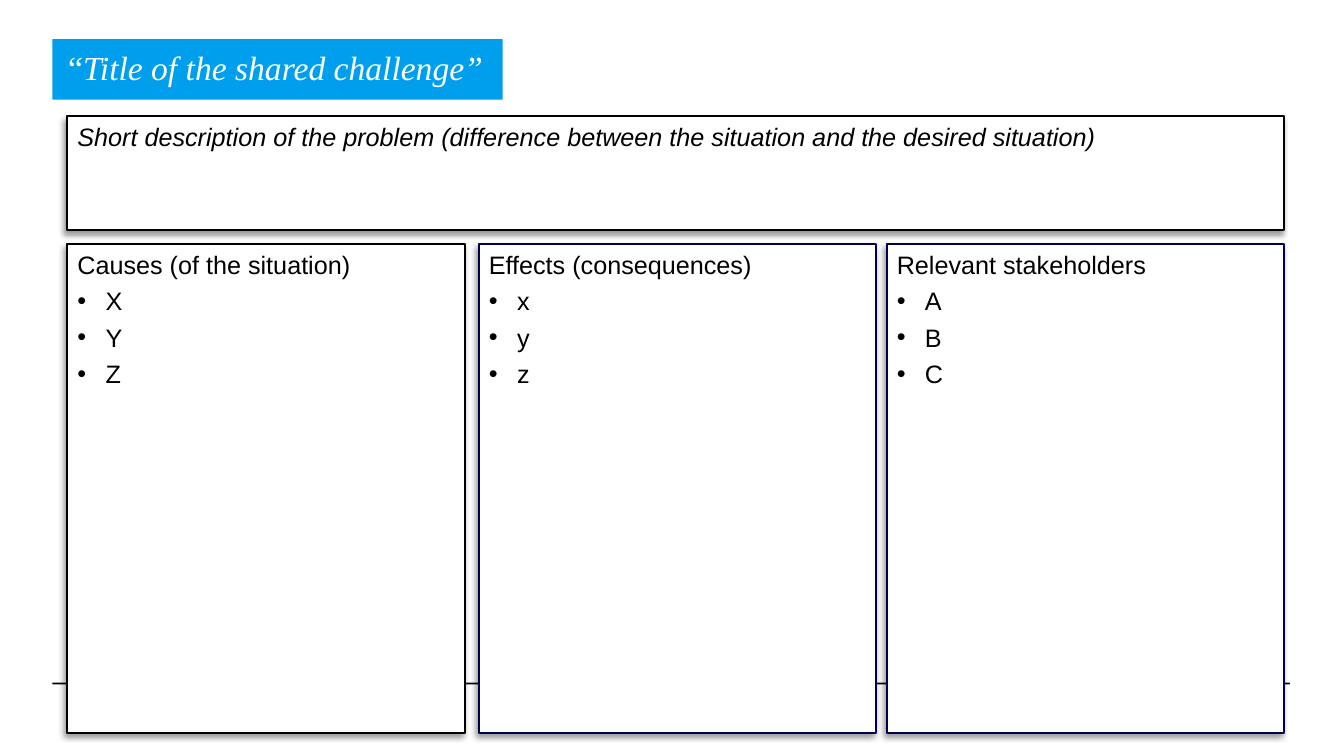
from dataclasses import dataclass

from lxml import etree
from pptx import Presentation
from pptx import util as u
from pptx.dml.color import RGBColor
from pptx.enum import shapes, text
from pptx.oxml import parse_xml
from pptx.oxml.ns import nsdecls, qn

TITLE = [("“", False), ("Title of the shared challenge”", True)]
DESCRIPTION = ("Short description of the problem "
               "(difference between the situation and the desired situation)")
# heading, items, left edge in cm, outline colour
COLUMNS = [
    ("Causes (of the situation)", ["X", "Y", "Z"], 1.7, "000000"),
    ("Effects (consequences)", ["x", "y", "z"], 12.07, "00004B"),
    ("Relevant stakeholders", ["A", "B", "C"], 22.35, "00004B"),
]


@dataclass(frozen=True)
class Theme:
    black: str = "000000"
    white: str = "FFFFFF"
    blue: str = "009FEE"
    body_font: str = "Arial"
    title_font: str = "Times New Roman"
    body_size: float = 18
    title_size: float = 24
    outline: float = 1.5
    item_gap: float = 4.5


T = Theme()
LEFT, COLUMN_W, COLUMN_TOP, COLUMN_H = 1.7, 10.01, 6.15, 12.32
CONTENT_W = COLUMNS[-1][2] + COLUMN_W - LEFT
INDENT = u.Cm(0.71)


def add_box(slide, left, top, width, height, fill, line=None):
    sp = slide.shapes.add_shape(shapes.MSO_SHAPE.RECTANGLE,
                                *map(u.Cm, (left, top, width, height)))
    sp.shadow.inherit = False
    sp.fill.solid()
    sp.fill.fore_color.rgb = RGBColor.from_string(fill)
    if line:
        sp.line.color.rgb = RGBColor.from_string(line)
        sp.line.width = u.Pt(T.outline)
    else:
        sp.line.fill.background()
    tf = sp.text_frame
    tf.word_wrap = True
    tf.vertical_anchor = text.MSO_ANCHOR.TOP
    return sp


def add_panel(slide, left, top, width, height, line):
    """White outlined box with a soft shadow to the lower left."""
    sp = add_box(slide, left, top, width, height, T.white, line)
    effects = sp._element.spPr.find(qn("a:effectLst"))
    effects.append(parse_xml(
        f'<a:outerShdw {nsdecls("a")} blurRad="{u.Pt(4)}" dist="{u.Pt(3)}" '
        f'dir="{135 * 60000}" algn="tr" rotWithShape="0">'
        f'<a:srgbClr val="{T.black}"><a:alpha val="40000"/></a:srgbClr>'
        '</a:outerShdw>'))
    return sp


def write(p, content, font=T.body_font, size=T.body_size, color=T.black,
          italic=False, bullet=False):
    p.alignment = text.PP_ALIGN.LEFT
    if bullet:
        pPr = p._p.get_or_add_pPr()
        pPr.set("marL", str(INDENT))
        pPr.set("indent", str(-INDENT))
        etree.SubElement(pPr, qn("a:buFont")).set("typeface", T.body_font)
        etree.SubElement(pPr, qn("a:buChar")).set("char", "•")
        p.space_before = u.Pt(T.item_gap)
    r = p.add_run()
    r.text = content
    r.font.name = font
    r.font.size = u.Pt(size)
    r.font.italic = italic
    r.font.color.rgb = RGBColor.from_string(color)


def add_title(slide):
    tf = add_box(slide, 1.32, 0.99, 11.35, 1.52, T.blue).text_frame
    tf.word_wrap = False
    tf.auto_size = text.MSO_AUTO_SIZE.SHAPE_TO_FIT_TEXT
    tf.margin_left = tf.margin_right = u.Cm(0.4)
    tf.margin_top, tf.margin_bottom = u.Cm(0.2), u.Cm(0.3)
    for part, italic in TITLE:
        write(tf.paragraphs[0], part, font=T.title_font, size=T.title_size,
              color=T.white, italic=italic)


def main():
    prs = Presentation()
    prs.slide_width, prs.slide_height = u.Cm(33.87), u.Cm(19.05)
    slide = prs.slides.add_slide(prs.slide_layouts[6])

    add_box(slide, 1.32, 17.2, 31.19, 0.05, T.black)
    for heading, items, left, line in COLUMNS:
        sp = add_panel(slide, left, COLUMN_TOP, COLUMN_W, COLUMN_H, line)
        tf = sp.text_frame
        write(tf.paragraphs[0], heading)
        for item in items:
            write(tf.add_paragraph(), item, bullet=True)

    add_title(slide)
    sp = add_panel(slide, LEFT, 2.92, CONTENT_W, 2.87, T.black)
    write(sp.text_frame.paragraphs[0], DESCRIPTION, italic=True)
    prs.save("out.pptx")


if __name__ == "__main__":
    main()
